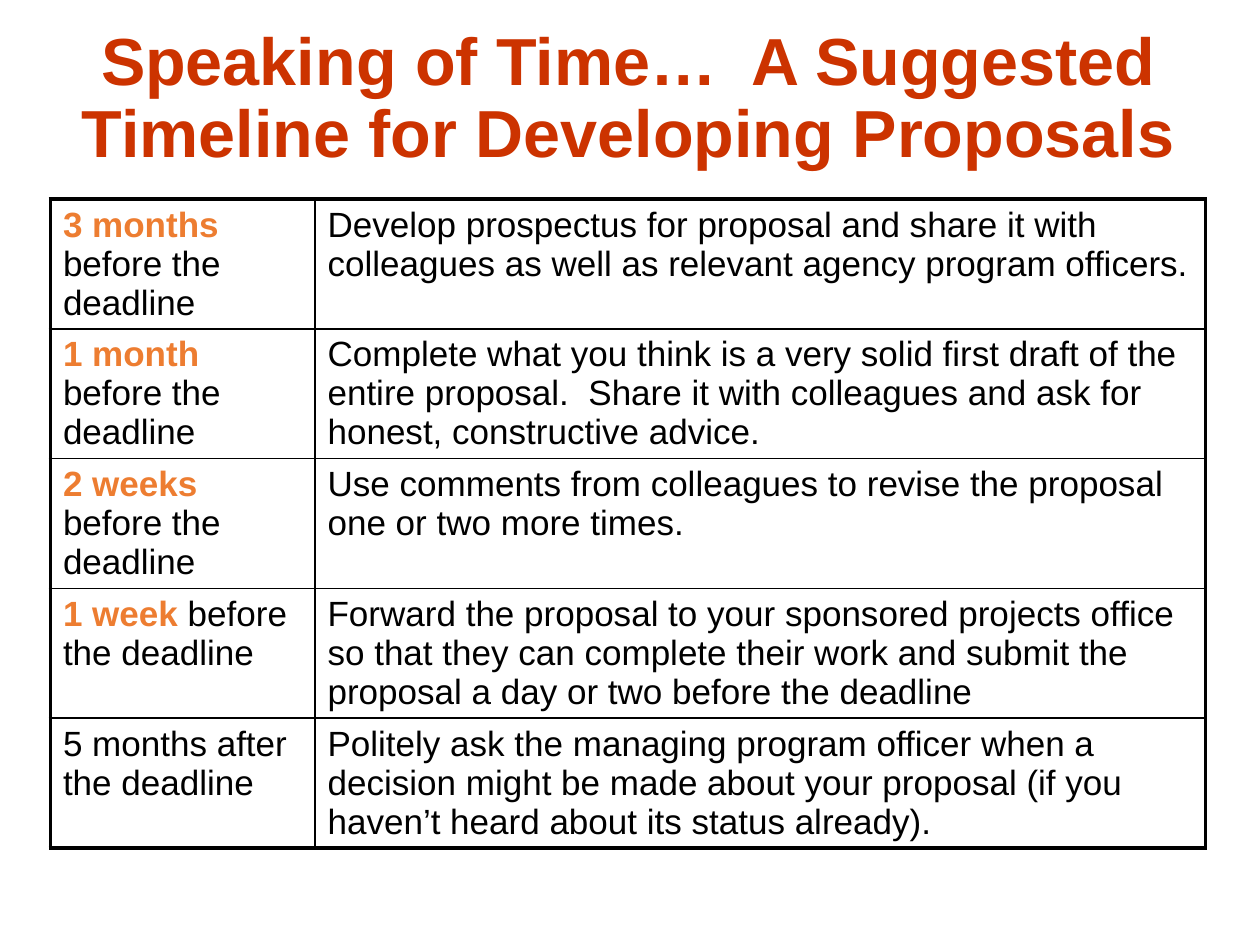
"""Build a slide with a suggested timeline for developing proposals."""
from dataclasses import dataclass

from lxml.etree import SubElement
from pptx import Presentation
from pptx.dml.color import RGBColor
from pptx.enum.text import MSO_ANCHOR, MSO_AUTO_SIZE, PP_ALIGN
from pptx.oxml.ns import qn
from pptx.util import Inches, Pt

FONT = "Arial"
BLACK, ORANGE, RED = "000000", "ED7D31", "CC3300"
THICK, THIN = 2.25, 1
COLUMN_WIDTHS = (2.1, 7.07)
ROW_HEIGHT = 1.03


@dataclass
class Step:
    when: str
    rest: str
    task: str


STEPS = [
    Step("3 months", " before the deadline",
         "Develop prospectus for proposal and share it with colleagues "
         "as well as relevant agency program officers."),
    Step("1 month", " before the deadline",
         "Complete what you think is a very solid first draft of the entire proposal.  "
         "Share it with colleagues and ask for honest, constructive advice."),
    Step("2 weeks", " before the deadline",
         "Use comments from colleagues to revise the proposal one or two more times."),
    Step("1 week", " before the deadline",
         "Forward the proposal to your sponsored projects office so that they can "
         "complete their work and submit the proposal a day or two before the deadline"),
    Step("", "5 months after the deadline",
         "Politely ask the managing program officer when a decision might be made "
         "about your proposal (if you haven’t heard about its status already)."),
]


def style(span, size: float, color: str, bold: bool = False) -> None:
    span.font.name = FONT
    span.font.size = Pt(size)
    span.font.bold = bold
    span.font.color.rgb = RGBColor.from_string(color)


def add_border(cell, side: str, width: float) -> None:
    line = SubElement(cell._tc.get_or_add_tcPr(), qn(f"a:ln{side}"), w=str(Pt(width)))
    fill = SubElement(line, qn("a:solidFill"))
    SubElement(fill, qn("a:srgbClr"), val=BLACK)


def fill_cell(cell, highlight: str, text: str) -> None:
    para = cell.text_frame.paragraphs[0]
    for words, color in ((highlight, ORANGE), (text, BLACK)):
        if words:
            span = para.add_run()
            span.text = words
            style(span, 20, color, bold=color == ORANGE)


def add_title(page, text: str) -> None:
    box = page.shapes.title
    box.left, box.top, box.width, box.height = map(Inches, (0.49, 0.17, 9, 1.25))
    frame = box.text_frame
    frame.text = text
    frame.word_wrap = True
    frame.auto_size = MSO_AUTO_SIZE.NONE
    frame.vertical_anchor = MSO_ANCHOR.MIDDLE
    para = frame.paragraphs[0]
    para.alignment = PP_ALIGN.CENTER
    para.line_spacing = 0.9
    style(para.runs[0], 38, RED, bold=True)


def add_timeline(page, steps: list[Step]) -> None:
    last_row, last_column = len(steps) - 1, len(COLUMN_WIDTHS) - 1
    table = page.shapes.add_table(
        len(steps), len(COLUMN_WIDTHS), Inches(0.4), Inches(1.58),
        Inches(sum(COLUMN_WIDTHS)), Inches(ROW_HEIGHT * len(steps))).table
    table.first_row = table.horz_banding = False
    for column, width in zip(table.columns, COLUMN_WIDTHS):
        column.width = Inches(width)
    for row, step in enumerate(steps):
        table.rows[row].height = Inches(ROW_HEIGHT)
        for column, texts in enumerate([(step.when, step.rest), ("", step.task)]):
            cell = table.cell(row, column)
            fill_cell(cell, *texts)
            outer = {"L": column == 0, "R": column == last_column,
                     "T": row == 0, "B": row == last_row}
            for side, is_outer in outer.items():
                add_border(cell, side, THICK if is_outer else THIN)
            cell.fill.background()


def main() -> None:
    deck = Presentation()
    deck.slide_width, deck.slide_height = Inches(10), Inches(7.5)
    page = deck.slides.add_slide(deck.slide_layouts[5])
    add_title(page, "Speaking of Time…  A Suggested Timeline for Developing Proposals")
    add_timeline(page, STEPS)
    deck.save("out.pptx")


if __name__ == "__main__":
    main()
